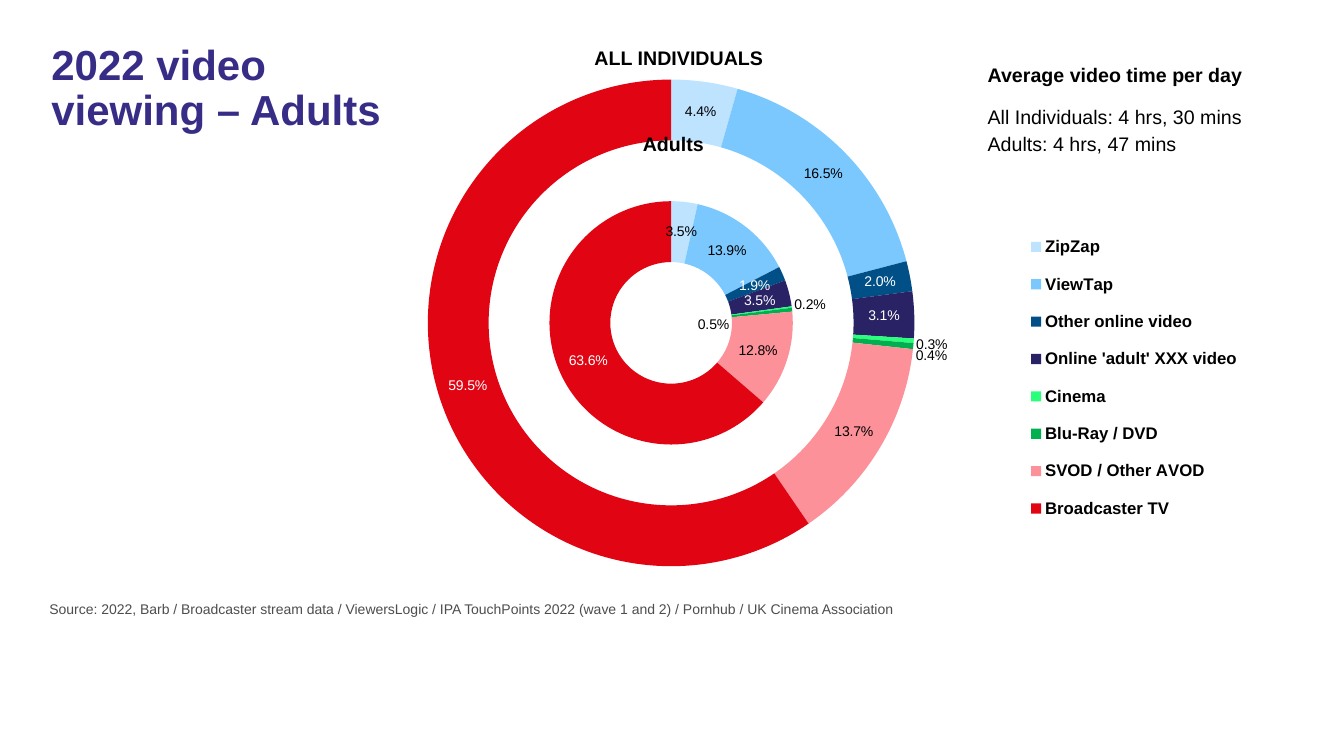
from lxml import etree
from pptx import Presentation
from pptx import util as u
from pptx.chart.data import CategoryChartData
from pptx.dml.color import RGBColor
from pptx.enum import chart as charts, text
from pptx.oxml import parse_xml
from pptx.oxml.ns import nsdecls, qn

HEADLINE = "2022 video viewing – Adults"
SOURCE = ("Source: 2022, Barb / Broadcaster stream data / ViewersLogic / "
          "IPA TouchPoints 2022 (wave 1 and 2) / Pornhub / UK Cinema Association")
CATEGORIES = [
    ("ZipZap", "BDE3FF", "000000"),
    ("ViewTap", "7BC8FF", "000000"),
    ("Other online video", "004F87", "FFFFFF"),
    ("Online 'adult' XXX video", "292265", "FFFFFF"),
    ("Cinema", "2AFF7C", "000000"),
    ("Blu-Ray / DVD", "00B050", "000000"),
    ("SVOD / Other AVOD", "FD9199", "000000"),
    ("Broadcaster TV", "E10514", "FFFFFF"),
]
RINGS = [
    ("Adults", [3.5, 13.9, 1.9, 3.5, 0.2, 0.5, 12.8, 63.6],
     {4: (0.05, -0.01), 5: (-0.05, 0.02)}),
    ("Gap", [None] * len(CATEGORIES), {}),
    ("All Individuals", [4.4, 16.5, 2, 3.1, 0.3, 0.4, 13.7, 59.5],
     {4: (0.05, 0.01), 5: (0.05, 0.02)}),
]
CAPTIONS = [
    ("Average video time per day", 24.64, 1.47, 9.2, True, False),
    ("All Individuals: 4 hrs, 30 mins", 24.64, 2.51, 9.2, False, False),
    ("Adults: 4 hrs, 47 mins", 24.64, 3.2, 9.2, False, False),
    ("ALL INDIVIDUALS", 14.66, 1.02, 4.9, True, True),
    ("Adults", 15.47, 3.2, 3, True, True),
]
THEME = {
    "font": "Arial", "headline": "372D87", "ink": "000000", "source": "4D4D4D",
    "headline_size": 30, "caption_size": 14, "legend_size": 12, "small_size": 10,
}
SHARE_FORMAT = '0.0"%"'
PLOT_AREA = (0.11, 0.095, 0.503, 0.811)
LEGEND_AREA = (0.7, 0.33, 0.28, 0.52)


def style(font, size, color, bold=False):
    """Apply the theme font with a size, colour and weight."""
    font.name = THEME["font"]
    font.size = u.Pt(size)
    font.bold = bold
    font.color.rgb = RGBColor.from_string(color)


def place(shape, left, top, width, height):
    """Set a shape's position and size in centimetres."""
    shape.left, shape.top = u.Cm(left), u.Cm(top)
    shape.width, shape.height = u.Cm(width), u.Cm(height)


def write(shape, words, size, color, bold=False, centred=False):
    """Fill a shape with one top-anchored paragraph."""
    frame = shape.text_frame
    frame.word_wrap = True
    frame.auto_size = text.MSO_AUTO_SIZE.NONE
    frame.vertical_anchor = text.MSO_ANCHOR.TOP
    line = frame.paragraphs[0]
    line.text = words
    line.alignment = text.PP_ALIGN.CENTER if centred else text.PP_ALIGN.LEFT
    line.space_before = u.Pt(0)
    return line


def layout_xml(sizes, inner=False, offset=False):
    """Return a manual chart layout from fractions of the chart."""
    modes = [] if offset else [("xMode", "edge"), ("yMode", "edge")]
    if inner:
        modes.insert(0, ("layoutTarget", "inner"))
    parts = modes + list(zip("xywh", sizes))
    body = "".join(f'<c:{tag} val="{value}"/>' for tag, value in parts)
    return parse_xml(f'<c:layout {nsdecls("c")}><c:manualLayout>{body}'
                     '</c:manualLayout></c:layout>')


def set_layout(parent, layout, before):
    """Swap in a layout ahead of the first child with the given tag."""
    for old in parent.findall(qn("c:layout")):
        parent.remove(old)
    parent.find(qn(before)).addprevious(layout)


def style_ring(ring, moves):
    """Colour the slices of a ring and set its labels."""
    labels = ring.data_labels
    labels.show_value = True
    labels.number_format = SHARE_FORMAT
    labels.number_format_is_linked = False
    style(labels.font, THEME["small_size"], "FFFFFF")
    for index, (_, fill, ink) in enumerate(CATEGORIES):
        point = ring.points[index]
        point.format.fill.solid()
        point.format.fill.fore_color.rgb = RGBColor.from_string(fill)
        point.format.line.fill.background()
        style(point.data_label.font, THEME["small_size"], ink)
        label = ring._element.xpath(f'c:dLbls/c:dLbl[c:idx/@val="{index}"]')[0]
        share = etree.Element(qn("c:numFmt"), formatCode=SHARE_FORMAT, sourceLinked="0")
        label.find(qn("c:idx")).addnext(share)
        if index in moves:
            set_layout(label, layout_xml(moves[index], offset=True), "c:numFmt")


def add_rings(slide):
    """Add the two-ring doughnut with its legend."""
    data = CategoryChartData(number_format=SHARE_FORMAT)
    data.categories = [name for name, _, _ in CATEGORIES]
    for name, shares, _ in RINGS:
        data.add_series(name, shares)
    rings = slide.shapes.add_chart(
        charts.XL_CHART_TYPE.DOUGHNUT, u.Cm(8.1), u.Cm(0.41),
        u.Cm(24.38), u.Cm(15.44), data).chart
    rings.has_title = False
    style(rings.font, 18, THEME["ink"])
    plot = rings.plots[0]
    plot.vary_by_categories = True
    plot._element.find(qn("c:holeSize")).set("val", "47")
    for ring, (_, shares, moves) in zip(plot.series, RINGS):
        if any(shares):
            style_ring(ring, moves)
    rings.has_legend = True
    legend = rings.legend
    legend.position = charts.XL_LEGEND_POSITION.RIGHT
    legend.include_in_layout = False
    style(legend.font, THEME["legend_size"], THEME["ink"], True)
    set_layout(legend._element, layout_xml(LEGEND_AREA), "c:overlay")
    set_layout(plot._element.getparent(), layout_xml(PLOT_AREA, inner=True),
               "c:doughnutChart")


def main():
    """Build the video viewing slide."""
    deck = Presentation()
    deck.slide_width, deck.slide_height = u.Cm(33.87), u.Cm(19.05)
    slide = deck.slides.add_slide(deck.slide_layouts[1])
    add_rings(slide)

    headline = slide.shapes.title
    place(headline, 1.04, 0.99, 9.7, 7.01)
    line = write(headline, HEADLINE, THEME["headline_size"], THEME["headline"])
    line.line_spacing = 0.9
    style(line.font, THEME["headline_size"], THEME["headline"], True)

    for words, left, top, width, bold, centred in CAPTIONS:
        caption = slide.shapes.add_textbox(u.Cm(left), u.Cm(top), u.Cm(width), u.Cm(0.86))
        line = write(caption, words, THEME["caption_size"], THEME["ink"], bold, centred)
        style(line.font, THEME["caption_size"], THEME["ink"], bold)

    source = slide.placeholders[1]
    place(source, 0.99, 15.01, 31.5, 0.84)
    line = write(source, SOURCE, THEME["small_size"], THEME["source"])
    properties = line._p.get_or_add_pPr()
    properties.set("marL", "0")
    properties.set("indent", "0")
    etree.SubElement(properties, qn("a:buNone"))
    style(line.font, THEME["small_size"], THEME["source"])

    deck.save("out.pptx")


if __name__ == "__main__":
    main()
